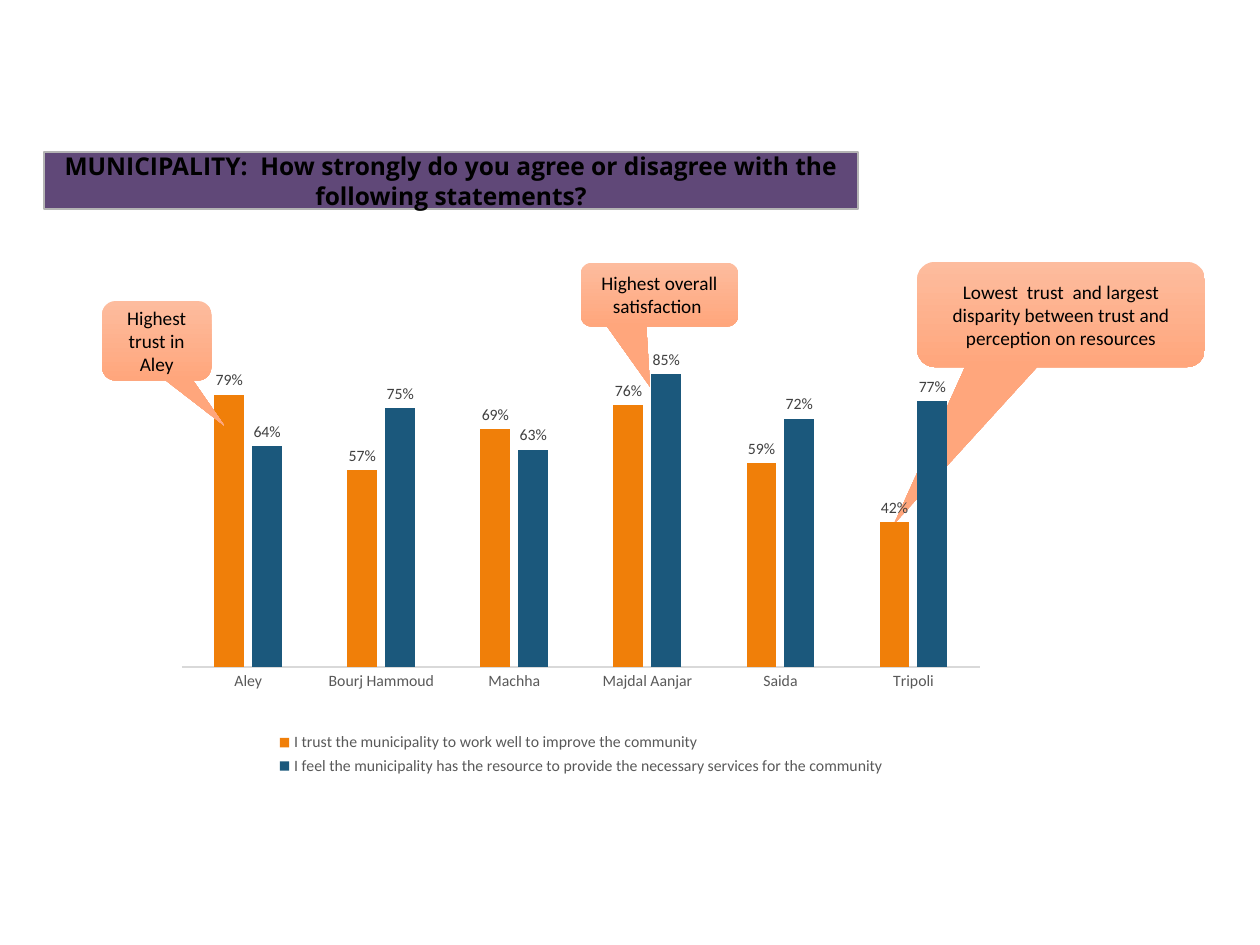
from lxml import etree
from pptx import Presentation
from pptx.chart.data import CategoryChartData
from pptx.dml.color import RGBColor
from pptx.enum.chart import XL_CHART_TYPE, XL_LABEL_POSITION, XL_LEGEND_POSITION, XL_TICK_MARK
from pptx.enum.shapes import MSO_SHAPE
from pptx.enum.text import MSO_ANCHOR, PP_ALIGN
from pptx.oxml.ns import qn
from pptx.util import Cm, Pt

RECTANGLE = MSO_SHAPE.RECTANGLE
CALLOUT = MSO_SHAPE.ROUNDED_RECTANGULAR_CALLOUT
MIDDLE = MSO_ANCHOR.MIDDLE
CENTER = PP_ALIGN.CENTER
COLUMNS = XL_CHART_TYPE.COLUMN_CLUSTERED
OUTSIDE_END = XL_LABEL_POSITION.OUTSIDE_END
BOTTOM = XL_LEGEND_POSITION.BOTTOM
NO_TICK = XL_TICK_MARK.NONE

CATEGORIES = ["Aley", "Bourj Hammoud", "Machha", "Majdal Aanjar", "Saida", "Tripoli"]
SERIES = [
    ("I trust the municipality to work well to improve the community",
     "F07F09", (0.79, 0.57, 0.69, 0.76, 0.59, 0.42)),
    ("I feel the municipality has the resource to provide the necessary services for the community",
     "1B587C", (0.64, 0.75, 0.63, 0.85, 0.72, 0.77)),
]
PLOT_LAYOUT = {"layoutTarget": "inner", "xMode": "edge", "yMode": "edge",
               "x": 0.03, "y": 0.14, "w": 0.94, "h": 0.63}


def color(value):
    """Turn a hex string into a colour."""
    return RGBColor.from_string(value)


def apply(target, values):
    """Set every attribute named in values on target."""
    for name, value in values.items():
        setattr(target, name, value)


class SlideBuilder:
    """Hold the style and the current slide, and draw its elements."""

    body_font = "Calibri"
    title_font = "Open Sans"
    ink = "000000"
    callout_colors = ("FDBC9E", "FFA67C")

    def __init__(self, slide):
        """Keep the slide to draw on."""
        self.slide = slide

    def style_font(self, font, size, hex_color, **extra):
        """Apply size, colour and typeface to a font."""
        apply(font, {"name": self.body_font, "size": Pt(size), **extra})
        font.color.rgb = color(hex_color)

    def box(self, kind, place, text, size, **font_values):
        """Draw a preset shape with centred text."""
        shape = self.slide.shapes.add_shape(kind, *map(Cm, place))
        shape.shadow.inherit = False
        apply(shape.text_frame, {"word_wrap": True, "vertical_anchor": MIDDLE})
        paragraph = shape.text_frame.paragraphs[0]
        paragraph.alignment = CENTER
        run = paragraph.add_run()
        run.text = text
        self.style_font(run.font, size, self.ink, **font_values)
        return shape

    def title(self, place, text):
        """Draw the title banner."""
        shape = self.box(RECTANGLE, place, text, 14, name=self.title_font, bold=True)
        shape.fill.solid()
        shape.fill.fore_color.rgb = color("604878")
        shape.line.color.rgb = color("B4B4B4")
        shape.line.width = Pt(1)

    def callout(self, place, tip, text):
        """Draw a gradient callout whose tail ends at tip."""
        shape = self.box(CALLOUT, place, text, 11)
        shape.line.fill.background()
        shape.fill.gradient()
        shape.fill.gradient_angle = 270
        for stop, hex_color in zip(shape.fill.gradient_stops, self.callout_colors):
            stop.color.rgb = color(hex_color)
        shape.adjustments[0], shape.adjustments[1] = tip

    def chart(self, place, categories, series):
        """Draw the clustered column chart."""
        data = CategoryChartData(number_format="0%")
        data.categories = categories
        for name, _, values in series:
            data.add_series(name, values)
        chart = self.slide.shapes.add_chart(COLUMNS, *map(Cm, place), data).chart
        apply(chart, {"has_title": False, "has_legend": True})
        self.style_font(chart.font, 10, self.ink)
        apply(chart.legend, {"position": BOTTOM, "include_in_layout": False})
        self.style_font(chart.legend.font, 9, "595959")

        axis = chart.category_axis
        apply(axis, {"major_tick_mark": NO_TICK, "minor_tick_mark": NO_TICK})
        self.style_font(axis.tick_labels.font, 9, "595959")
        axis.format.line.color.rgb = color("D9D9D9")
        axis.format.line.width = Pt(0.75)
        apply(chart.value_axis, {"visible": False, "has_major_gridlines": False,
                                 "minimum_scale": 0, "maximum_scale": 0.9})

        plot = chart.plots[0]
        apply(plot, {"gap_width": 219, "overlap": -27, "vary_by_categories": False})
        for column, (_, hex_color, _) in zip(plot.series, series):
            column.format.fill.solid()
            column.format.fill.fore_color.rgb = color(hex_color)
            labels = column.data_labels
            apply(labels, {"show_value": True, "position": OUTSIDE_END,
                           "number_format": "0%", "number_format_is_linked": False})
            self.style_font(labels.font, 9, "404040")
        self.place_plot(chart)

    def place_plot(self, chart):
        """Give the plot area its fixed place in the chart."""
        area = chart.element.find(".//" + qn("c:plotArea"))
        for old in area.findall(qn("c:layout")):
            area.remove(old)
        layout = etree.Element(qn("c:layout"))
        area.insert(0, layout)
        manual = etree.SubElement(layout, qn("c:manualLayout"))
        for name, value in PLOT_LAYOUT.items():
            etree.SubElement(manual, qn("c:" + name)).set("val", str(value))


def main():
    """Build and save the presentation."""
    presentation = Presentation()
    apply(presentation, {"slide_width": Cm(25.4), "slide_height": Cm(19.05)})
    builder = SlideBuilder(presentation.slides.add_slide(presentation.slide_layouts[6]))
    builder.callout((18.49, 5.28, 5.8, 2.12), (-0.58, 1.99),
                    "Lowest  trust  and largest disparity between trust and perception on resources")
    builder.title((0.89, 3.07, 16.41, 1.14),
                  "MUNICIPALITY:  How strongly do you agree or disagree with the following statements?")
    builder.chart((3.15, 5.8, 17.12, 9.93), CATEGORIES, SERIES)
    builder.callout((2.06, 6.07, 2.2, 1.6), (0.62, 1.07), "Highest trust in Aley")
    builder.callout((11.71, 5.3, 3.17, 1.28), (-0.06, 1.45), "Highest overall satisfaction ")
    presentation.save("out.pptx")


if __name__ == "__main__":
    main()
